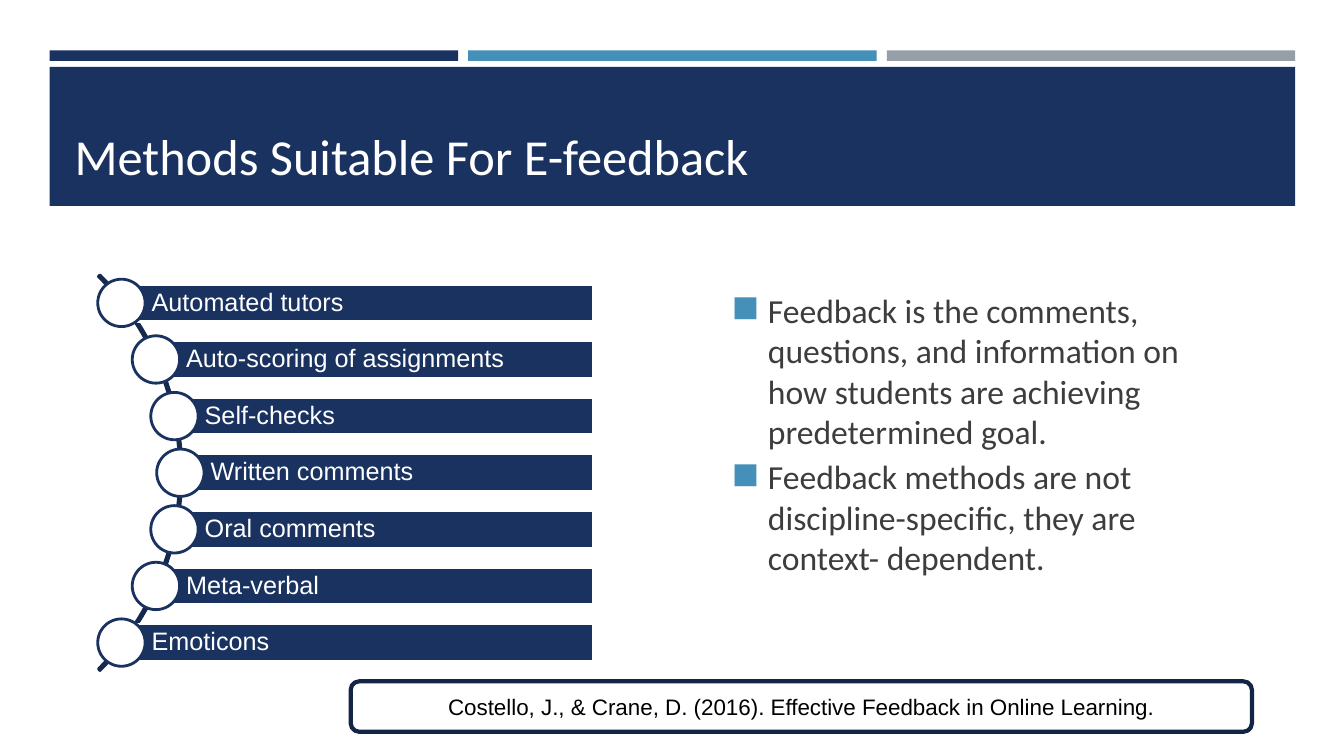
from math import sqrt

from lxml import etree
from pptx import Presentation
from pptx.dml.color import RGBColor
from pptx.enum.shapes import MSO_SHAPE
from pptx.enum.text import MSO_ANCHOR, PP_ALIGN
from pptx.oxml.ns import qn
from pptx.util import Inches, Pt

RECT, ROUND = MSO_SHAPE.RECTANGLE, MSO_SHAPE.ROUNDED_RECTANGLE
OVAL, ARC = MSO_SHAPE.OVAL, MSO_SHAPE.BLOCK_ARC
MIDDLE, BOTTOM = MSO_ANCHOR.MIDDLE, MSO_ANCHOR.BOTTOM
LEFT, CENTER = PP_ALIGN.LEFT, PP_ALIGN.CENTER

NAVY = RGBColor(0x1A, 0x32, 0x60)
DARK = RGBColor(0x15, 0x28, 0x4D)
EDGE = RGBColor(0x13, 0x25, 0x47)
BLUE = RGBColor(0x45, 0x90, 0xB8)
GRAY = RGBColor(0x96, 0x9F, 0xA7)
INK = RGBColor(0x3D, 0x3D, 0x3D)
BLACK = RGBColor(0, 0, 0)
WHITE = RGBColor(0xFF, 0xFF, 0xFF)

# The slide is a grid of 160 columns and 90 rows; boxes are (x, y, w, h) in cells.
COLS, ROWS = 160, 90
WIDTH, HEIGHT = Inches(13.33), Inches(7.5)

METHODS = ["Automated tutors", "Auto-scoring of assignments", "Self-checks",
           "Written comments", "Oral comments", "Meta-verbal", "Emoticons"]
POINTS = [
    "Feedback is the comments, questions, and information on how students "
    "are achieving predetermined goal.",
    "Feedback methods are not discipline-specific, they are context- dependent.",
]
SOURCE = "Costello, J., & Crane, D. (2016). Effective Feedback in Online Learning."

TITLE = dict(size=Pt(36), name="Calibri", color=WHITE)
LABEL = dict(size=Pt(18), name="Arial", color=WHITE)
BODY = dict(size=Pt(24), name="Calibri", color=INK)
NOTE = dict(size=Pt(16), name="Arial", color=BLACK)


def place(box):
    """Turn a box in grid cells into slide lengths."""
    x, y, w, h = box
    return (round(x * WIDTH / COLS), round(y * HEIGHT / ROWS),
            round(w * WIDTH / COLS), round(h * HEIGHT / ROWS))


def add_form(slide, kind, box, fill=None, line=None, width=2):
    form = slide.shapes.add_shape(kind, *place(box))
    form.shadow.inherit = False
    if fill is None:
        form.fill.background()
    else:
        form.fill.solid()
        form.fill.fore_color.rgb = fill
    if line is None:
        form.line.fill.background()
    else:
        form.line.color.rgb = line
        form.line.width = Pt(width)
    return form


def write(form, lines, style, anchor=MIDDLE, align=LEFT, inset=(0.1, 0.1)):
    """Fill a shape with paragraphs and return them."""
    frame = form.text_frame
    frame.word_wrap = True
    frame.vertical_anchor = anchor
    frame.margin_left, frame.margin_right = map(Inches, inset)
    for i, line in enumerate(lines):
        para = frame.paragraphs[0] if i == 0 else frame.add_paragraph()
        para.alignment = align
        font = para.add_run().font
        para.runs[0].text = line
        for key, value in style.items():
            if key == "color":
                font.color.rgb = value
            else:
                setattr(font, key, value)
    return frame.paragraphs


def add_bullet(para):
    props = para._p.get_or_add_pPr()
    props.set("marL", str(Inches(0.5)))
    props.set("indent", str(Inches(-0.36)))
    color = etree.SubElement(props, qn("a:buClr"))
    etree.SubElement(color, qn("a:srgbClr"), val=str(BLUE))
    etree.SubElement(props, qn("a:buChar"), char="◼")


def add_stripes(slide, box):
    x, y, w, h = box
    gap = 1.2
    part = (w - 2 * gap) / 3
    for i, color in enumerate([NAVY, BLUE, GRAY]):
        add_form(slide, RECT, (x + i * (part + gap), y, part, h), color)


def add_banner(slide, box, title):
    x, y, w, h = box
    pad = 1.8
    add_form(slide, RECT, box, NAVY)
    inner = (x + pad, y + pad, w - 2 * pad, h - 2 * pad)
    write(slide.shapes.add_textbox(*place(inner)), [title], TITLE, BOTTOM)


def add_methods(slide, box):
    """Bars of equal pitch whose dots follow a curve."""
    x, y, w, h = box
    dot, bar, bend, ring = 5.64, 4.44, 32.64, 66.6
    pitch = (h - dot) / (len(METHODS) - 1)
    reach, mid = (h - dot) / 2, y + h / 2
    apex = x + dot / 2 + bend - sqrt(bend ** 2 - reach ** 2)
    arc = add_form(slide, ARC, (apex + 0.18 - ring, mid - ring / 2, ring, ring),
                   line=DARK)
    for i, value in enumerate([189, 27, 0.004]):
        arc.adjustments[i] = value
    for i, method in enumerate(METHODS):
        drop = i * pitch - reach
        cx, cy = apex - bend + sqrt(bend ** 2 - drop ** 2), mid + drop
        form = add_form(slide, RECT, (cx, cy - bar / 2, x + w - cx, bar),
                        NAVY, WHITE)
        write(form, [method], LABEL, inset=(0.3, 0.05))[0].line_spacing = 0.9
        add_form(slide, OVAL, (cx - dot / 2, cy - dot / 2, dot, dot), WHITE, NAVY)


def add_points(slide, box):
    form = slide.shapes.add_textbox(*place(box))
    for para in write(form, POINTS, BODY, inset=(0.1, 0.15)):
        para.space_before = Pt(3.6)
        add_bullet(para)


def add_source(slide, box):
    form = add_form(slide, ROUND, box, line=EDGE, width=3)
    write(form, [SOURCE], NOTE, align=CENTER)


def main():
    deck = Presentation()
    deck.slide_width, deck.slide_height = WIDTH, HEIGHT
    slide = deck.slides.add_slide(deck.slide_layouts[6])
    add_stripes(slide, (5.9, 6, 148.3, 1.25))
    add_banner(slide, (5.9, 7.95, 148.3, 16.55), "Methods Suitable For E-feedback")
    add_methods(slide, (11.64, 33.24, 59, 46.08))
    add_points(slide, (84.24, 22.2, 64.8, 58.8))
    add_source(slide, (41.76, 81.12, 107.28, 6))
    deck.save("out.pptx")


if __name__ == "__main__":
    main()
